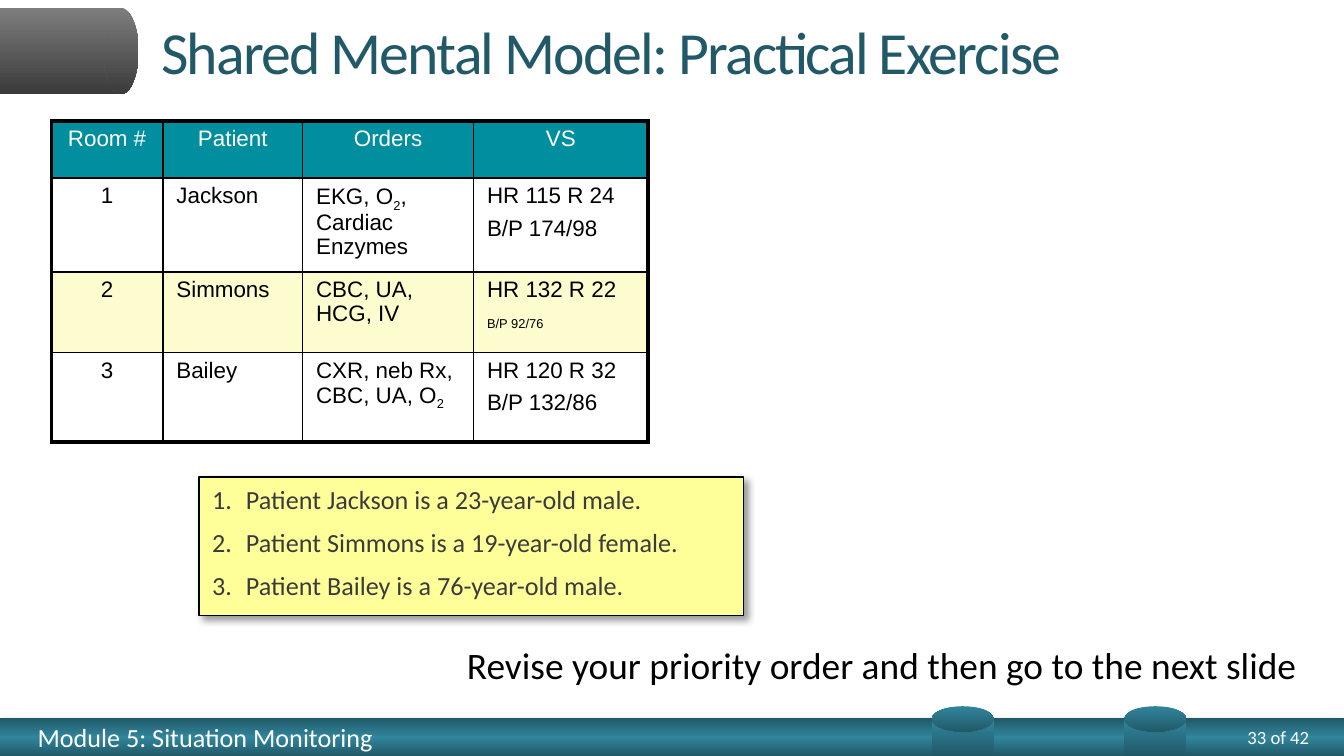
from lxml.etree import SubElement
from pptx import Presentation
from pptx.dml.color import RGBColor
from pptx.enum.shapes import MSO_SHAPE
from pptx.enum.text import MSO_ANCHOR, PP_ALIGN
from pptx.oxml.ns import qn
from pptx.util import Cm, Pt

TEAL, LIGHT_TEAL, BLACK, WHITE = "215968", "31859C", "000000", "FFFFFF"
GREYS = ("7D7D7D", "3B3B3B")

COLUMN_WIDTHS = (2.11, 2.64, 3.23, 3.3)
ROW_HEIGHTS = (1.07, 1.78, 1.52, 1.7)
ROW_FILLS = ("018E9F", None, "FCFCCE", None)
ROOMS = (
    ("Room #", "Patient", "Orders", "VS"),
    ("1", "Jackson", "EKG, O|2|, Cardiac Enzymes", "HR 115 R 24\nB/P 174/98"),
    ("2", "Simmons", "CBC, UA, HCG, IV", "HR 132 R 22\vB/P 92/76"),
    ("3", "Bailey", "CXR, neb Rx, CBC, UA, O|2", "HR 120 R 32\nB/P 132/86"),
)
PATIENTS = (
    "Patient Jackson is a 23-year-old male.",
    "Patient Simmons is a 19-year-old female.",
    "Patient Bailey is a 76-year-old male.",
)


def color(code):
    """Turn a hex string into a colour."""
    return RGBColor.from_string(code)


def place(box):
    """Turn a box in centimetres into lengths."""
    return [Cm(value) for value in box]


def style(para, size, code, name="Calibri"):
    """Format every run of a paragraph."""
    for span in para.runs:
        span.font.size, span.font.name = Pt(size), name
        span.font.color.rgb = color(code)
    for line_break in para._p.findall(qn("a:br")):
        SubElement(line_break, qn("a:rPr"), sz=str(size * 100))


def add_gradient_shape(page, kind, box, codes):
    """Add a shape shaded evenly from top to bottom."""
    shape = page.shapes.add_shape(kind, *place(box))
    shape.shadow.inherit = False
    shape.line.fill.background()
    shape.fill.gradient()
    gradient = shape._element.spPr.find(qn("a:gradFill"))
    for child in list(gradient):
        gradient.remove(child)
    stops = SubElement(gradient, qn("a:gsLst"))
    for index, code in enumerate(codes):
        position = 100000 * index // (len(codes) - 1)
        stop = SubElement(stops, qn("a:gs"), pos=str(position))
        SubElement(stop, qn("a:srgbClr"), val=code)
    SubElement(gradient, qn("a:lin"), ang="5400000", scaled="0")
    return shape


def add_shadow(shape, opacity, blur, distance, angle):
    """Give a shape a black outer shadow."""
    shape.shadow.inherit = False
    effects = shape._element.spPr.find(qn("a:effectLst"))
    shadow = SubElement(effects, qn("a:outerShdw"), blurRad=str(Pt(blur)),
                        dist=str(Pt(distance)), dir=str(angle * 60000),
                        algn="tl", rotWithShape="0")
    tint = SubElement(shadow, qn("a:srgbClr"), val=BLACK)
    SubElement(tint, qn("a:alpha"), val=str(opacity * 1000))


def add_label(page, box, text, size, code, alignment=PP_ALIGN.LEFT, margin=None):
    """Add one line of text, centred vertically when a margin is given."""
    frame = page.shapes.add_textbox(*place(box)).text_frame
    frame.word_wrap = True
    if margin is not None:
        frame.margin_left = frame.margin_right = Cm(margin)
        frame.margin_top = frame.margin_bottom = Cm(margin)
        frame.vertical_anchor = MSO_ANCHOR.MIDDLE
    frame.text = text
    frame.paragraphs[0].alignment = alignment
    style(frame.paragraphs[0], size, code)


def add_footer(page, box):
    """Add the footer bar with module name, page count and two tabs."""
    left, top, width, height = box
    bar = add_gradient_shape(page, MSO_SHAPE.RECTANGLE, box, (TEAL, LIGHT_TEAL, TEAL))
    add_shadow(bar, 35, 3.1, 1, 90)
    add_label(page, (left + 0.71, top, 13.61, height),
              "Module 5: Situation Monitoring", 14, WHITE, margin=0)
    add_label(page, (left + width - 2.72, top, 2.06, height),
              "33 of 42", 10, WHITE, PP_ALIGN.RIGHT, 0)
    for offset in (17.61, 21.25):
        for kind, rise, depth in ((MSO_SHAPE.RECTANGLE, 0.02, 0.69),
                                  (MSO_SHAPE.OVAL, -0.23, 0.48)):
            add_gradient_shape(page, kind, (left + offset, top + rise, 1.17, depth),
                               (LIGHT_TEAL, TEAL))


def add_corner_tab(page, box):
    """Add the grey tab with a rounded right end."""
    left, top, width, height = box
    add_gradient_shape(page, MSO_SHAPE.RECTANGLE,
                       (left, top, width - 0.33, height), GREYS)
    add_gradient_shape(page, MSO_SHAPE.OVAL,
                       (left + width - 0.66, top, 0.66, height), GREYS)


def set_title(page, box, text):
    """Place and format the title."""
    title = page.shapes.title
    title.left, title.top, title.width, title.height = place(box)
    frame = title.text_frame
    frame.text = text
    frame.word_wrap = True
    frame.vertical_anchor = MSO_ANCHOR.MIDDLE
    para = frame.paragraphs[0]
    para.alignment = PP_ALIGN.LEFT
    style(para, 32, TEAL)
    para.runs[0]._r.get_or_add_rPr().set("spc", "-100")


def set_borders(cell, outer_sides):
    """Draw cell borders, thicker on the outer sides of the table."""
    properties = cell._tc.get_or_add_tcPr()
    for side in "LRTB":
        weight = 2.25 if side in outer_sides else 1
        line = SubElement(properties, qn(f"a:ln{side}"), w=str(Pt(weight)))
        SubElement(SubElement(line, qn("a:solidFill")), qn("a:srgbClr"), val=BLACK)


def fill_cell(cell, text, code, alignment):
    """Write cell text, in which every second part between bars is a subscript."""
    frame = cell.text_frame
    frame.text = text
    for number, para in enumerate(frame.paragraphs):
        parts = para.text.split("|")
        para.text = parts[0]
        for part in parts[1:]:
            para.add_run().text = part
        para.alignment, para.line_spacing = alignment, 0.95
        if number:
            para.space_before = Pt(4.8)
        style(para, 12, code, "Arial")
        for span in para.runs[1::2]:
            span.font._element.set("baseline", "-25000")


def add_room_table(page, box):
    """Add the table of rooms, orders and vital signs."""
    table = page.shapes.add_table(len(ROOMS), len(COLUMN_WIDTHS), *place(box)).table
    table.first_row = table.horz_banding = False
    for column, width in zip(table.columns, COLUMN_WIDTHS):
        column.width = Cm(width)
    last_row, last_column = len(ROOMS) - 1, len(COLUMN_WIDTHS) - 1
    for r, texts in enumerate(ROOMS):
        table.rows[r].height = Cm(ROW_HEIGHTS[r])
        for c, text in enumerate(texts):
            cell = table.cell(r, c)
            edges = {"L": c == 0, "R": c == last_column, "T": r == 0, "B": r == last_row}
            set_borders(cell, [side for side, outer in edges.items() if outer])
            if ROW_FILLS[r]:
                cell.fill.solid()
                cell.fill.fore_color.rgb = color(ROW_FILLS[r])
            else:
                cell.fill.background()
            centred = r == 0 or c == 0
            fill_cell(cell, text, BLACK if r else WHITE,
                      PP_ALIGN.CENTER if centred else PP_ALIGN.LEFT)


def add_patient_list(page, box):
    """Add the yellow box with the numbered patients."""
    panel = page.shapes.add_shape(MSO_SHAPE.RECTANGLE, *place(box))
    panel.fill.solid()
    panel.fill.fore_color.rgb = color("FFFF99")
    panel.line.color.rgb, panel.line.width = color(BLACK), Pt(0.75)
    add_shadow(panel, 40, 4, 3, 45)
    frame = panel.text_frame
    frame.word_wrap, frame.vertical_anchor = True, MSO_ANCHOR.TOP
    frame.text = "\n".join(PATIENTS)
    for para in frame.paragraphs:
        para.alignment, para.space_after = PP_ALIGN.LEFT, Pt(6)
        properties = para._p.get_or_add_pPr()
        properties.set("marL", str(Cm(0.64)))
        properties.set("indent", str(-Cm(0.64)))
        SubElement(properties, qn("a:buFont"), typeface="+mj-lt")
        SubElement(properties, qn("a:buAutoNum"), type="arabicPeriod")
        style(para, 14, "3B3B3B")


def main():
    """Build the deck."""
    deck = Presentation()
    deck.slide_width, deck.slide_height = Cm(25.4), Cm(14.29)
    page = deck.slides.add_slide(deck.slide_layouts[5])
    add_footer(page, (0, 13.58, 25.4, 0.71))
    add_corner_tab(page, (0, 0.15, 2.62, 1.63))
    set_title(page, (2.79, 0, 22.28, 1.9), "Shared Mental Model: Practical Exercise")
    add_room_table(page, (0.97, 2.29, sum(COLUMN_WIDTHS), sum(ROW_HEIGHTS)))
    add_label(page, (7.77, 12.01, 16.99, 1.12),
              "Revise your priority order and then go to the next slide",
              20, BLACK, PP_ALIGN.RIGHT)
    add_patient_list(page, (3.76, 9.02, 10.29, 2.62))
    deck.save("out.pptx")


if __name__ == "__main__":
    main()
